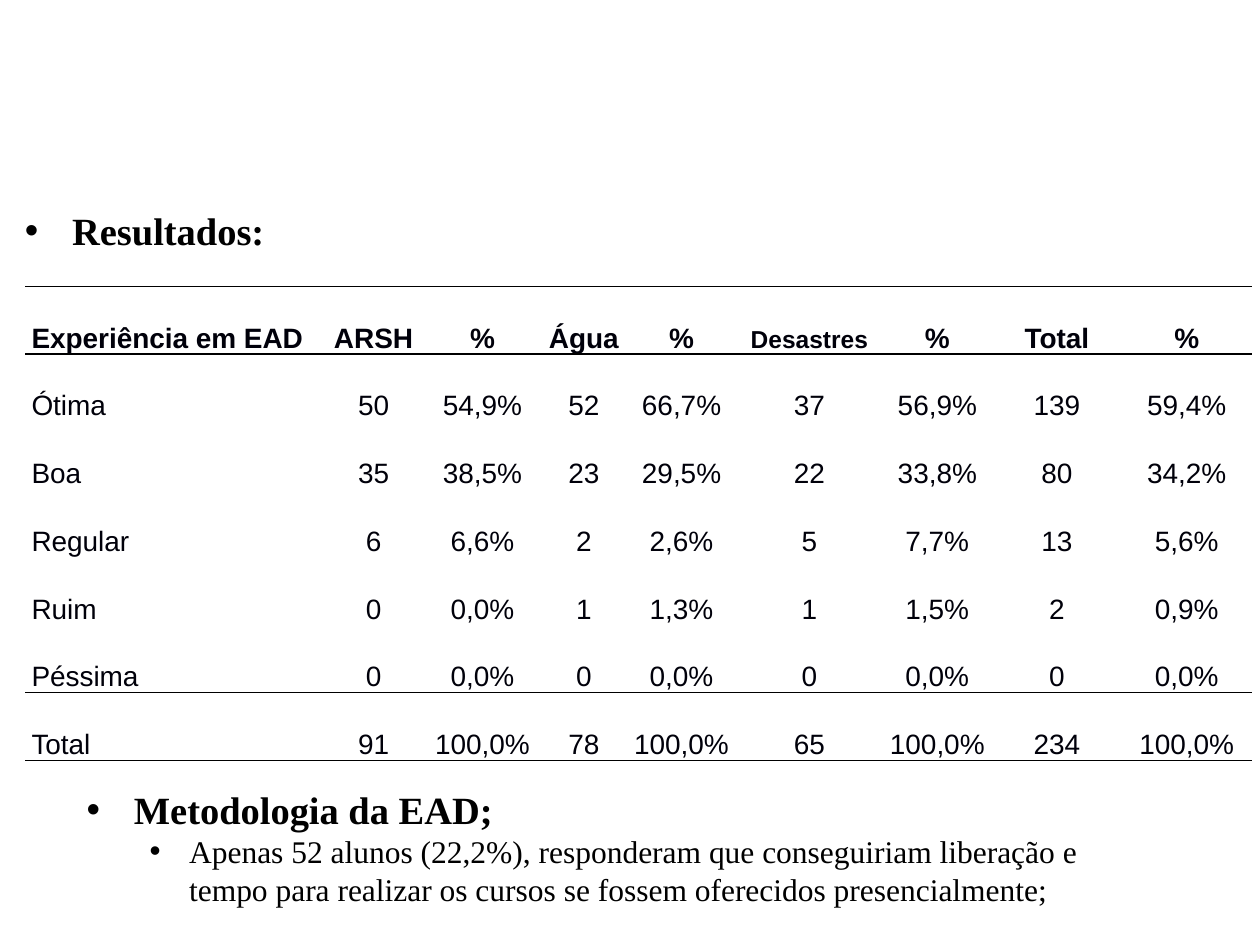
from pptx import Presentation
from pptx.dml.color import RGBColor
from pptx.enum.text import MSO_ANCHOR, MSO_AUTO_SIZE, PP_ALIGN
from pptx.oxml import parse_xml
from pptx.oxml.ns import nsdecls
from pptx.util import Pt

COLORS = {"text": "000000", "cell": "00000A", "rule": "000000"}
SERIF, SANS = "Times New Roman", "Arial"

ROWS = [
    ("Experiência em EAD", "ARSH", "%", "Água", "%", "Desastres", "%", "Total", "%"),
    ("Ótima", "50", "54,9%", "52", "66,7%", "37", "56,9%", "139", "59,4%"),
    ("Boa", "35", "38,5%", "23", "29,5%", "22", "33,8%", "80", "34,2%"),
    ("Regular", "6", "6,6%", "2", "2,6%", "5", "7,7%", "13", "5,6%"),
    ("Ruim", "0", "0,0%", "1", "1,3%", "1", "1,5%", "2", "0,9%"),
    ("Péssima", "0", "0,0%", "0", "0,0%", "0", "0,0%", "0", "0,0%"),
    ("Total", "91", "100,0%", "78", "100,0%", "65", "100,0%", "234", "100,0%"),
]
WIDTHS = [170.64, 56.88, 67.68, 48.24, 63.36, 82.8, 63.36, 73.44, 74.88]
ROW_H = 38.7
RULED = {0, 1, 6, 7}

NOTES = [
    ((7.2, 114.5, 720, 33.8), [("Resultados:", 0)]),
    ((42.5, 445, 616.3, 77.8), [
        ("Metodologia da EAD;", 0),
        ("Apenas 52 alunos (22,2%), responderam que conseguiriam liberação e "
         "tempo para realizar os cursos se fossem oferecidos presencialmente;", 1),
    ]),
]
LEVELS = [
    {"size": 22, "bold": True, "left": 27, "hang": 27},
    {"size": 18, "bold": False, "left": 58.5, "hang": 22.5},
]


def style(para, face, size, bold, color):
    for run in para.runs:
        font = run.font
        font.name, font.size, font.bold = face, Pt(size), bold
        font.color.rgb = RGBColor.from_string(COLORS[color])


def add_note(slide, place, items):
    frame = slide.shapes.add_textbox(*map(Pt, place)).text_frame
    frame.word_wrap = True
    frame.auto_size = MSO_AUTO_SIZE.SHAPE_TO_FIT_TEXT
    frame.vertical_anchor = MSO_ANCHOR.MIDDLE
    frame.text = "\n".join(text for text, _ in items)
    for para, (_, depth) in zip(frame.paragraphs, items):
        level = LEVELS[depth]
        para.level = depth
        props = para._p.get_or_add_pPr()
        props.set("marL", str(Pt(level["left"])))
        props.set("indent", str(-Pt(level["hang"])))
        props.append(parse_xml(f'<a:buFont {nsdecls("a")} typeface="Arial"/>'))
        props.append(parse_xml(f'<a:buChar {nsdecls("a")} char="•"/>'))
        style(para, SERIF, level["size"], level["bold"], "text")


def set_rules(cell, top, bottom):
    props = cell._tc.get_or_add_tcPr()
    sides = {"L": False, "R": False, "T": top, "B": bottom}
    for place, (side, shown) in enumerate(sides.items()):
        fill = "<a:noFill/>"
        if shown:
            fill = f'<a:solidFill><a:srgbClr val="{COLORS["rule"]}"/></a:solidFill>'
        line = f'<a:ln{side} {nsdecls("a")} w="{Pt(1)}">{fill}</a:ln{side}>'
        props.insert(place, parse_xml(line))


def add_grid(slide):
    size = (sum(WIDTHS), ROW_H * len(ROWS))
    frame = slide.shapes.add_table(
        len(ROWS), len(WIDTHS), Pt(14.4), Pt(163.7), *map(Pt, size))
    table = frame.table
    table.first_row = table.horz_banding = False
    for col, width in zip(table.columns, WIDTHS):
        col.width = Pt(width)
    for r, texts in enumerate(ROWS):
        table.rows[r].height = Pt(ROW_H)
        for c, text in enumerate(texts):
            cell = table.cell(r, c)
            cell.fill.background()
            cell.margin_left = cell.margin_right = Pt(3.6)
            cell.margin_top = cell.margin_bottom = 0
            cell.vertical_anchor = MSO_ANCHOR.BOTTOM
            cell.text_frame.text = text
            para = cell.text_frame.paragraphs[0]
            para.alignment = PP_ALIGN.CENTER if c else PP_ALIGN.JUSTIFY
            para.line_spacing = 1.5
            para.space_before = Pt(6)
            style(para, SANS, 14 if text == "Desastres" else 16, r == 0, "cell")
            set_rules(cell, r in RULED, r + 1 in RULED)


def main():
    deck = Presentation()
    deck.slide_width, deck.slide_height = Pt(720), Pt(540)
    slide = deck.slides.add_slide(deck.slide_layouts[6])
    add_note(slide, *NOTES[0])
    add_grid(slide)
    add_note(slide, *NOTES[1])
    deck.save("out.pptx")


if __name__ == "__main__":
    main()
